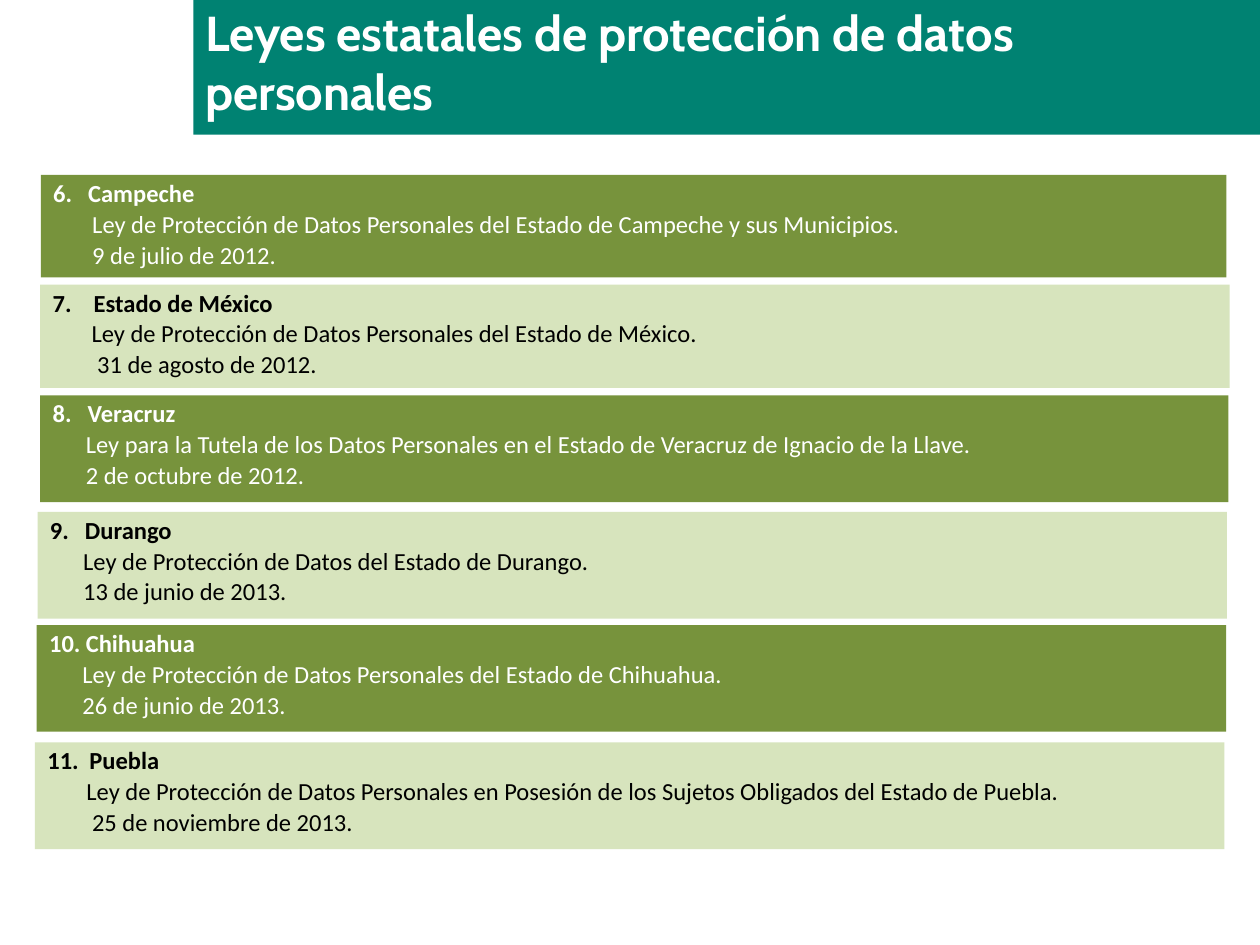
"""Build the slide on Mexican state data protection laws."""
from dataclasses import dataclass

from pptx import Presentation
from pptx.dml.color import RGBColor
from pptx.enum import shapes, text
from pptx.util import Pt


@dataclass(frozen=True)
class Theme:
    teal: RGBColor = RGBColor.from_string("008272")
    dark_green: RGBColor = RGBColor.from_string("77933C")
    light_green: RGBColor = RGBColor.from_string("D7E4BD")
    white: RGBColor = RGBColor.from_string("FFFFFF")
    black: RGBColor = RGBColor.from_string("000000")
    title_font: str = "Cabin"
    body_font: str = "Calibri"
    title_size: Pt = Pt(28)
    body_size: Pt = Pt(14)


def add_block(slide, left, top, width, height, color):
    shape = slide.shapes.add_shape(
        shapes.MSO_SHAPE.RECTANGLE, Pt(left), Pt(top), Pt(width), Pt(height))
    shape.shadow.inherit = False
    shape.fill.solid()
    shape.fill.fore_color.rgb = color
    shape.line.fill.background()
    return shape


def set_font(paragraph, name, size, color, bold):
    paragraph.font.name = name
    paragraph.font.size = size
    paragraph.font.color.rgb = color
    paragraph.font.bold = bold


theme = Theme()
presentation = Presentation()
presentation.slide_width, presentation.slide_height = Pt(720), Pt(540)
slide = presentation.slides.add_slide(presentation.slide_layouts[5])

title = slide.shapes.title
title.left, title.top, title.width, title.height = Pt(110), Pt(-2), Pt(607), Pt(75)
title_frame = title.text_frame
title_frame.text = "Leyes estatales de protección de datos personales"
title_frame.word_wrap = True
title_frame.auto_size = text.MSO_AUTO_SIZE.NONE
title_frame.vertical_anchor = text.MSO_ANCHOR.TOP
title_frame.paragraphs[0].alignment = text.PP_ALIGN.LEFT
set_font(title_frame.paragraphs[0], theme.title_font, theme.title_size, theme.white, True)

banner = add_block(slide, 110.5, 0, 609.5, 77, theme.teal)
title.element.addprevious(banner.element)

laws = [
    ((23.3, 100, 677.5, 58.5), (20, 22.3, 22.3), "Campeche",
     "Ley de Protección de Datos Personales del Estado de Campeche y sus Municipios.",
     "9 de julio de 2012."),
    ((23, 162.7, 679.7, 59), (23.5, 22.3, 25.5), "Estado de México",
     "Ley de Protección de Datos Personales del Estado de México.",
     "31 de agosto de 2012."),
    ((23, 226, 679, 61), (20, 19, 19), "Veracruz",
     "Ley para la Tutela de los Datos Personales en el Estado de Veracruz de Ignacio de la Llave.",
     "2 de octubre de 2012."),
    ((21.5, 292.5, 679.7, 61), (20, 19, 19), "Durango",
     "Ley de Protección de Datos del Estado de Durango.",
     "13 de junio de 2013."),
    ((21, 357.2, 679.7, 61), (21, 19, 19), "Chihuahua",
     "Ley de Protección de Datos Personales del Estado de Chihuahua.",
     "26 de junio de 2013."),
    ((20, 424.3, 679.7, 61), (24, 22.3, 25.5), "Puebla",
     "Ley de Protección de Datos Personales en Posesión de los Sujetos Obligados del Estado de Puebla.",
     "25 de noviembre de 2013."),
]

for number, (box, indents, state, law, date) in enumerate(laws, start=6):
    is_dark = number % 2 == 0
    fill = theme.dark_green if is_dark else theme.light_green
    ink = theme.white if is_dark else theme.black
    frame = add_block(slide, *box, fill).text_frame
    frame.word_wrap = True
    frame.vertical_anchor = text.MSO_ANCHOR.TOP
    frame.text = "\n".join([f"{number}.\t{state}", law, date])
    for row, (paragraph, indent) in enumerate(zip(frame.paragraphs, indents)):
        is_heading = row == 0
        properties = paragraph._p.get_or_add_pPr()
        properties.set("marL", str(Pt(indent)))
        properties.set("indent", str(-Pt(indent) if is_heading else 0))
        paragraph.alignment = text.PP_ALIGN.JUSTIFY
        paragraph.line_spacing = 0.9
        paragraph.space_before = Pt(0 if is_heading else 2.5)
        set_font(paragraph, theme.body_font, theme.body_size, ink, is_heading)

presentation.save("out.pptx")
